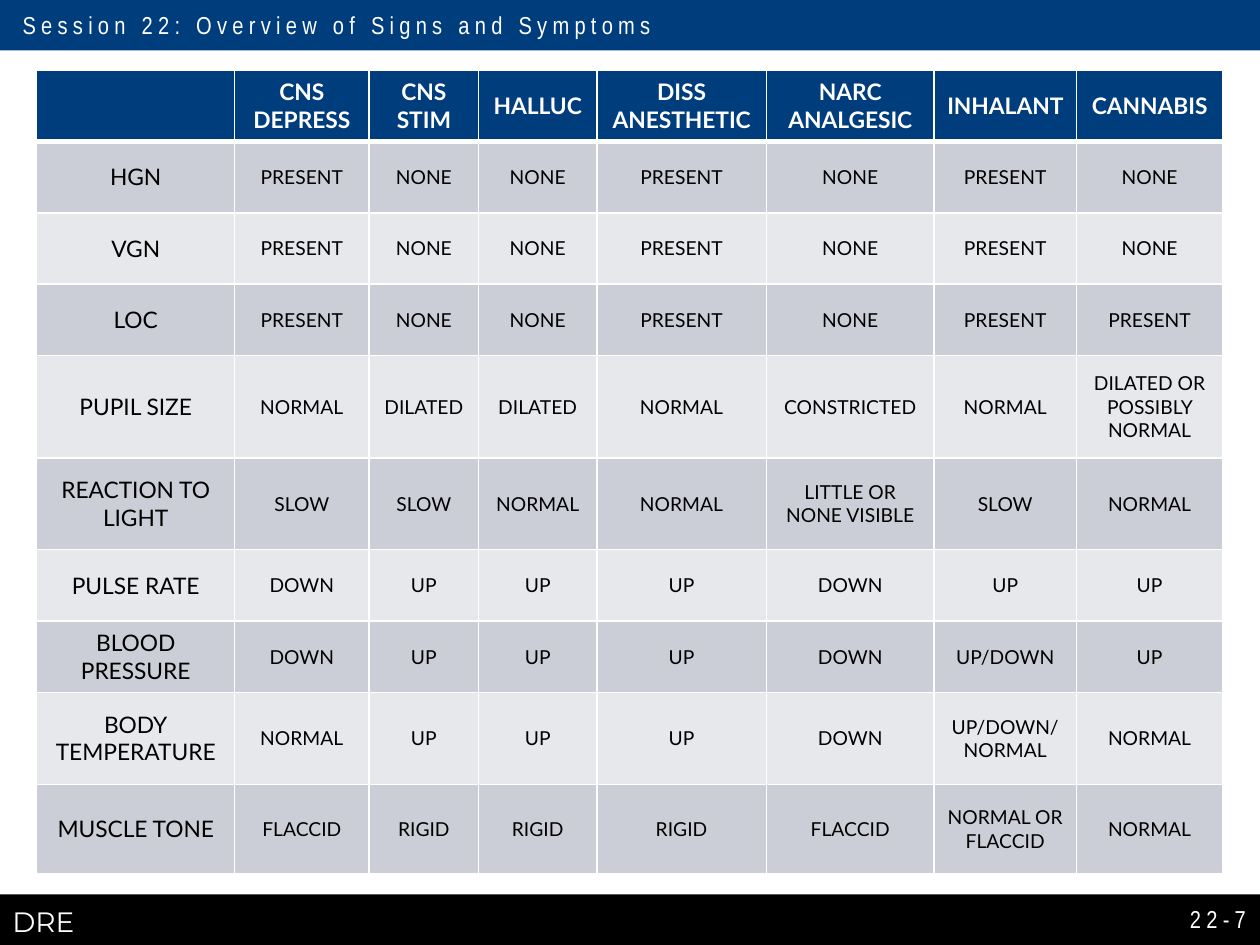
from dataclasses import dataclass

import lxml.etree
import pptx
import pptx.dml.color
import pptx.enum.shapes
import pptx.enum.text
import pptx.oxml.ns
import pptx.util

Cm = pptx.util.Cm
Pt = pptx.util.Pt
ALIGN = pptx.enum.text.PP_ALIGN
ANCHOR = pptx.enum.text.MSO_ANCHOR
qn = pptx.oxml.ns.qn

COLORS = {
    "navy": "003D7D",
    "black": "000000",
    "white": "FFFFFF",
    "band_dark": "CCCED7",
    "band_light": "E7E8EC",
}


@dataclass(frozen=True)
class TextStyle:
    font: str
    size: int
    color: str
    bold: bool = False
    spacing: int = 0
    align: ALIGN = ALIGN.LEFT
    anchor: ANCHOR = ANCHOR.TOP


@dataclass(frozen=True)
class Box:
    left: float
    top: float
    width: float
    height: float

    def lengths(self) -> list:
        return [Cm(v) for v in (self.left, self.top, self.width, self.height)]


@dataclass(frozen=True)
class Sign:
    name: str
    findings: tuple
    height: float = 1.44


SESSION = TextStyle("Arial Narrow", 14, "white", spacing=3)
PAGE = TextStyle("Arial Narrow", 14, "white", spacing=3, align=ALIGN.RIGHT, anchor=ANCHOR.MIDDLE)
COURSE = TextStyle("Montserrat", 16, "white")
HEADING = TextStyle("Lato", 13, "white", bold=True, align=ALIGN.CENTER, anchor=ANCHOR.MIDDLE)
SIGN_NAME = TextStyle("Lato", 13, "black", align=ALIGN.CENTER, anchor=ANCHOR.MIDDLE)
FINDING = TextStyle("Lato", 11, "black", align=ALIGN.CENTER, anchor=ANCHOR.MIDDLE)

COLUMN_WIDTHS = (3.99, 2.71, 2.21, 2.38, 3.42, 3.38, 2.87, 2.95)
SIGNS = (
    Sign("", ("CNS\nDEPRESS", "CNS\nSTIM", "HALLUC", "DISS\nANESTHETIC",
              "NARC\nANALGESIC", "INHALANT", "CANNABIS")),
    Sign("HGN", ("PRESENT", "NONE", "NONE", "PRESENT", "NONE", "PRESENT", "NONE")),
    Sign("VGN", ("PRESENT", "NONE", "NONE", "PRESENT", "NONE", "PRESENT", "NONE")),
    Sign("LOC", ("PRESENT", "NONE", "NONE", "PRESENT", "NONE", "PRESENT", "PRESENT")),
    Sign("PUPIL SIZE", ("NORMAL", "DILATED", "DILATED", "NORMAL", "CONSTRICTED", "NORMAL",
                        "DILATED OR POSSIBLY NORMAL"), 2.06),
    Sign("REACTION TO\nLIGHT", ("SLOW", "SLOW", "NORMAL", "NORMAL",
                                "LITTLE OR NONE VISIBLE", "SLOW", "NORMAL"), 1.85),
    Sign("PULSE RATE", ("DOWN", "UP", "UP", "UP", "DOWN", "UP", "UP")),
    Sign("BLOOD\nPRESSURE", ("DOWN", "UP", "UP", "UP", "DOWN", "UP/DOWN", "UP")),
    Sign("BODY\nTEMPERATURE", ("NORMAL", "UP", "UP", "UP", "DOWN",
                               "UP/DOWN/\vNORMAL", "NORMAL"), 1.85),
    Sign("MUSCLE TONE", ("FLACCID", "RIGID", "RIGID", "RIGID", "FLACCID",
                         "NORMAL OR FLACCID", "NORMAL"), 1.8),
)


def rgb(color: str) -> pptx.dml.color.RGBColor:
    return pptx.dml.color.RGBColor.from_string(COLORS[color])


def write(frame, text: str, style: TextStyle) -> None:
    frame.text = text
    font_values = {"name": style.font, "size": Pt(style.size), "bold": style.bold}
    for paragraph in frame.paragraphs:
        paragraph.alignment = style.align
        for run in paragraph.runs:
            for attribute, value in font_values.items():
                setattr(run.font, attribute, value)
            run.font.color.rgb = rgb(style.color)
            if style.spacing:
                run._r.get_or_add_rPr().set("spc", str(style.spacing * 100))
        for line_break in paragraph._p.findall(qn("a:br")):
            lxml.etree.SubElement(line_break, qn("a:rPr")).set("sz", str(style.size * 100))


def fill_frame(shape, text: str, style: TextStyle) -> None:
    frame_values = {
        "word_wrap": True,
        "auto_size": pptx.enum.text.MSO_AUTO_SIZE.NONE,
        "vertical_anchor": style.anchor,
    }
    for attribute, value in frame_values.items():
        setattr(shape.text_frame, attribute, value)
    write(shape.text_frame, text, style)


def add_bar(slide, box: Box, color: str):
    bar = slide.shapes.add_shape(pptx.enum.shapes.MSO_SHAPE.RECTANGLE, *box.lengths())
    bar.shadow.inherit = False
    bar.fill.solid()
    bar.fill.fore_color.rgb = rgb(color)
    bar.line.fill.background()
    return bar


def add_label(slide, box: Box, text: str, style: TextStyle) -> None:
    fill_frame(slide.shapes.add_textbox(*box.lengths()), text, style)


def set_borders(cell, widths: dict) -> None:
    """Draw white cell borders; widths gives points by side."""
    properties = cell._tc.get_or_add_tcPr()
    for side, width in widths.items():
        line = lxml.etree.SubElement(properties, qn(f"a:ln{side}"), w=str(Pt(width)))
        fill = lxml.etree.SubElement(line, qn("a:solidFill"))
        lxml.etree.SubElement(fill, qn("a:srgbClr"), val=COLORS["white"])


def add_signs_table(slide, left: float, top: float) -> None:
    box = Box(left, top, sum(COLUMN_WIDTHS), sum(sign.height for sign in SIGNS))
    table = slide.shapes.add_table(len(SIGNS), len(COLUMN_WIDTHS), *box.lengths()).table
    for column, width in zip(table.columns, COLUMN_WIDTHS):
        column.width = Cm(width)
    for r, sign in enumerate(SIGNS):
        table.rows[r].height = Cm(sign.height)
        band = "navy" if r == 0 else ("band_light", "band_dark")[r % 2]
        borders = {"L": 1, "R": 1, "T": 3 if r == 1 else 1, "B": 3 if r == 0 else 1}
        for c, text in enumerate((sign.name, *sign.findings)):
            cell = table.cell(r, c)
            set_borders(cell, borders)
            cell.fill.solid()
            cell.fill.fore_color.rgb = rgb(band)
            style = HEADING if r == 0 else SIGN_NAME if c == 0 else FINDING
            cell.vertical_anchor = style.anchor
            write(cell.text_frame, text, style)


def main() -> None:
    deck = pptx.Presentation()
    deck.slide_width, deck.slide_height = Cm(25.4), Cm(19.05)
    slide = deck.slides.add_slide(deck.slide_layouts[5])

    title = slide.shapes.title
    title.left, title.top, title.width, title.height = Box(0.2, 0.08, 23.16, 0.86).lengths()
    fill_frame(title, "Session 22: Overview of Signs and Symptoms", SESSION)

    for box, color in ((Box(0, 18.03, 25.4, 1.02), "black"), (Box(0, 0, 25.4, 1.02), "navy")):
        title.element.addprevious(add_bar(slide, box, color).element)

    add_label(slide, Box(0, 18.11, 4.75, 0.94), "DRE", COURSE)
    add_signs_table(slide, 0.74, 1.41)
    add_label(slide, Box(20.62, 18.01, 4.75, 1.02), "22-7", PAGE)
    deck.save("out.pptx")


if __name__ == "__main__":
    main()
